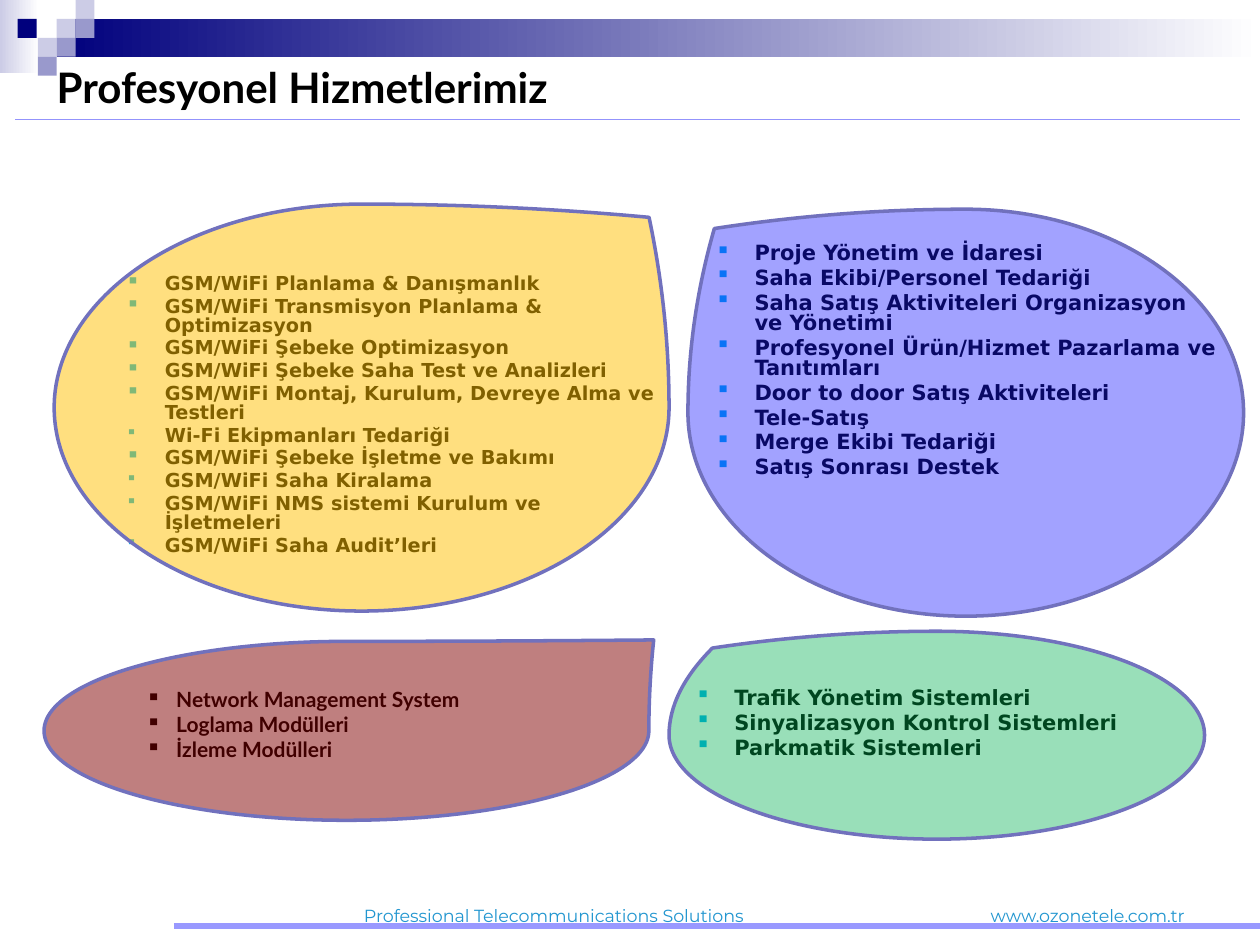
"""Build the professional services slide."""
from typing import NamedTuple

from lxml.etree import SubElement
from pptx import Presentation
from pptx.dml.color import RGBColor
from pptx.enum.shapes import MSO_CONNECTOR as Link, MSO_SHAPE as Kind
from pptx.enum.text import MSO_ANCHOR as Anchor, MSO_AUTO_SIZE as Fit, PP_ALIGN as Align
from pptx.oxml.ns import qn
from pptx.util import Inches, Pt


class Box(NamedTuple):
    x: float
    y: float
    w: float
    h: float


class Drop(NamedTuple):
    box: Box
    tip: float
    turn: int
    color: str
    alpha: int


class Group(NamedTuple):
    box: Box
    lines: list[str]
    style: dict
    drop: Drop


def rgb(code: str) -> RGBColor:
    return RGBColor.from_string(code)


def span(box: Box) -> list[int]:
    return [Inches(v) for v in box]


def rect(slide, box: Box, *colors: str) -> None:
    shape = slide.shapes.add_shape(Kind.RECTANGLE, *span(box))
    shape.shadow.inherit = False
    shape.line.fill.background()
    if len(colors) == 1:
        shape.fill.solid()
        shape.fill.fore_color.rgb = rgb(colors[0])
        return
    shape.fill.gradient()
    shape.fill.gradient_angle = 0
    for stop, code in zip(shape.fill.gradient_stops, colors):
        stop.color.rgb = rgb(code)


def rule(slide, x: float, end: float, y: float, color: str, width: float) -> None:
    line = slide.shapes.add_connector(
        Link.STRAIGHT, Inches(x), Inches(y), Inches(end), Inches(y))
    line.line.color.rgb = rgb(color)
    line.line.width = Pt(width)
    SubElement(line._element.spPr, qn("a:effectLst"))


def bullet(para, left: float, hang: float, color: str, scale: int) -> None:
    props = para._p.get_or_add_pPr()
    props.set("marL", str(Inches(left)))
    props.set("indent", str(-Inches(hang)))
    tint = SubElement(props, qn("a:buClr"))
    SubElement(tint, qn("a:srgbClr"), val=color)
    SubElement(props, qn("a:buSzPct"), val=str(scale * 1000))
    SubElement(props, qn("a:buChar"), char="▪")


def write(shape, *lines: str, font: str, size: float, color: str = "000000",
          bold: bool = False, align=Align.LEFT, anchor=Anchor.TOP, top: float = 0.05,
          pitch: float = 1.0, gap: float = 0, dot: str = "", left: float = 0,
          hang: float = 0, small: tuple = ()) -> None:
    frame = shape.text_frame
    frame.word_wrap = True
    frame.auto_size = Fit.NONE
    frame.vertical_anchor = anchor
    frame.margin_top = Inches(top)
    for i, text in enumerate(lines):
        para = frame.add_paragraph() if i else frame.paragraphs[0]
        if dot:
            bullet(para, left, hang, dot, 80 if i in small else 100)
        para.alignment = align
        para.line_spacing = pitch
        para.space_before = Pt(gap if i else 0)
        run = para.add_run()
        run.text = text
        run.font.name = font
        run.font.size = Pt(size)
        run.font.bold = bold
        run.font.color.rgb = rgb(color)


def label(slide, box: Box, *lines: str, **style) -> None:
    write(slide.shapes.add_textbox(*span(box)), *lines, **style)


def draw(slide, drop: Drop) -> None:
    shape = slide.shapes.add_shape(Kind.TEAR, *span(drop.box))
    shape.adjustments[0] = drop.tip
    shape.rotation = drop.turn
    shape.shadow.inherit = False
    shape.fill.solid()
    shape.fill.fore_color.rgb = rgb(drop.color)
    tint = shape.fill._xPr.find(qn("a:solidFill"))[0]
    SubElement(tint, qn("a:alpha"), val=str(drop.alpha * 1000))
    shape.line.color.rgb = rgb("7171BD")
    shape.line.width = Pt(2)


LIST = dict(font="DejaVu Sans", size=12, bold=True, pitch=0.8, gap=2.7,
            dot="00B0F0", left=0.81, hang=0.31)
GROUPS = [
    Group(Box(0.4, 1.57, 4.92, 3.36), [
        "GSM/WiFi Planlama & Danışmanlık",
        "GSM/WiFi Transmisyon Planlama & Optimizasyon",
        "GSM/WiFi Şebeke Optimizasyon",
        "GSM/WiFi Şebeke Saha Test ve Analizleri",
        "GSM/WiFi Montaj, Kurulum, Devreye Alma ve Testleri",
        "Wi-Fi Ekipmanları Tedariği",
        "GSM/WiFi Şebeke İşletme ve Bakımı",
        "GSM/WiFi Saha Kiralama",
        "GSM/WiFi NMS sistemi Kurulum ve İşletmeleri",
        "GSM/WiFi Saha Audit’leri",
    ], LIST | dict(size=11, gap=2.5, top=0.62, small=(5, 7, 8, 9)),
        Drop(Box(0.43, 1.62, 4.88, 3.23), 0.935, 0, "FFC000", 50)),
    Group(Box(5.08, 1.39, 4.68, 4.49), [
        "Proje Yönetim ve İdaresi",
        "Saha Ekibi/Personel Tedariği",
        "Saha Satış Aktiviteleri Organizasyon ve Yönetimi",
        "Profesyonel Ürün/Hizmet Pazarlama ve Tanıtımları",
        "Door to door Satış Aktiviteleri",
        "Tele-Satış",
        "Merge Ekibi Tedariği",
        "Satış Sonrası Destek",
    ], LIST | dict(top=0.55),
        Drop(Box(6.05, 1.07, 3.23, 4.41), 0.905, 270, "1818FF", 40)),
    Group(Box(4.92, 4.85, 4.9, 1.02), [
        "Trafik Yönetim Sistemleri",
        "Sinyalizasyon Kontrol Sistemleri",
        "Parkmatik Sistemleri",
    ], LIST | dict(top=0.62),
        Drop(Box(6.61, 3.71, 1.65, 4.25), 0.838, 270, "00B050", 40)),
    Group(Box(1.06, 5.4, 4.02, 0.71), [
        "Network Management System",
        "Loglama Modülleri",
        "İzleme Modülleri",
    ], dict(font="Lato", size=12, bold=True, dot="000000", left=0.24, hang=0.24),
        Drop(Box(0.35, 5.09, 4.8, 1.42), 1.016, 0, "800000", 50)),
]
TILES = [
    (0.45, 0.15, "CCCCE6"), (0.6, 0, "CCCCE6"), (0.6, 0.15, "9999CC"),
    (0.3, 0.3, "CCCCE6"), (0.14, 0.15, "00007D"), (0.45, 0.3, "9999CC"),
    (0.3, 0.45, "9999CC"),
]


def main() -> None:
    deck = Presentation()
    deck.slide_width, deck.slide_height = Inches(10), Inches(7.5)
    slide = deck.slides.add_slide(deck.slide_layouts[5])
    rect(slide, Box(0, 0, 0.31, 0.58), "CCCCE6", "FFFFFF")
    rect(slide, Box(0.45, 0.15, 9.55, 0.3), "00007D", "FFFFFF")
    for x, y, color in TILES:
        rect(slide, Box(x, y, 0.15, 0.15), color)
    rule(slide, 1.38, 10, 7.35, "9999FF", 3)
    foot = dict(font="Montserrat", size=10, color="2296D0", anchor=Anchor.BOTTOM)
    label(slide, Box(2.79, 6.9, 4.18, 0.5), "Professional Telecommunications Solutions", **foot)
    label(slide, Box(7.17, 6.9, 2.33, 0.5), "www.ozonetele.com.tr", align=Align.RIGHT, **foot)
    for group in GROUPS:
        label(slide, group.box, *group.lines, **group.style)
        draw(slide, group.drop)
    rule(slide, 0.12, 9.84, 0.95, "9393FC", 0.75)
    title = slide.shapes.title
    title.left, title.top, title.width, title.height = span(Box(0.35, 0.44, 6.85, 0.5))
    write(title, "Profesyonel Hizmetlerimiz", font="Lato", size=24, bold=True)
    deck.save("out.pptx")


if __name__ == "__main__":
    main()
